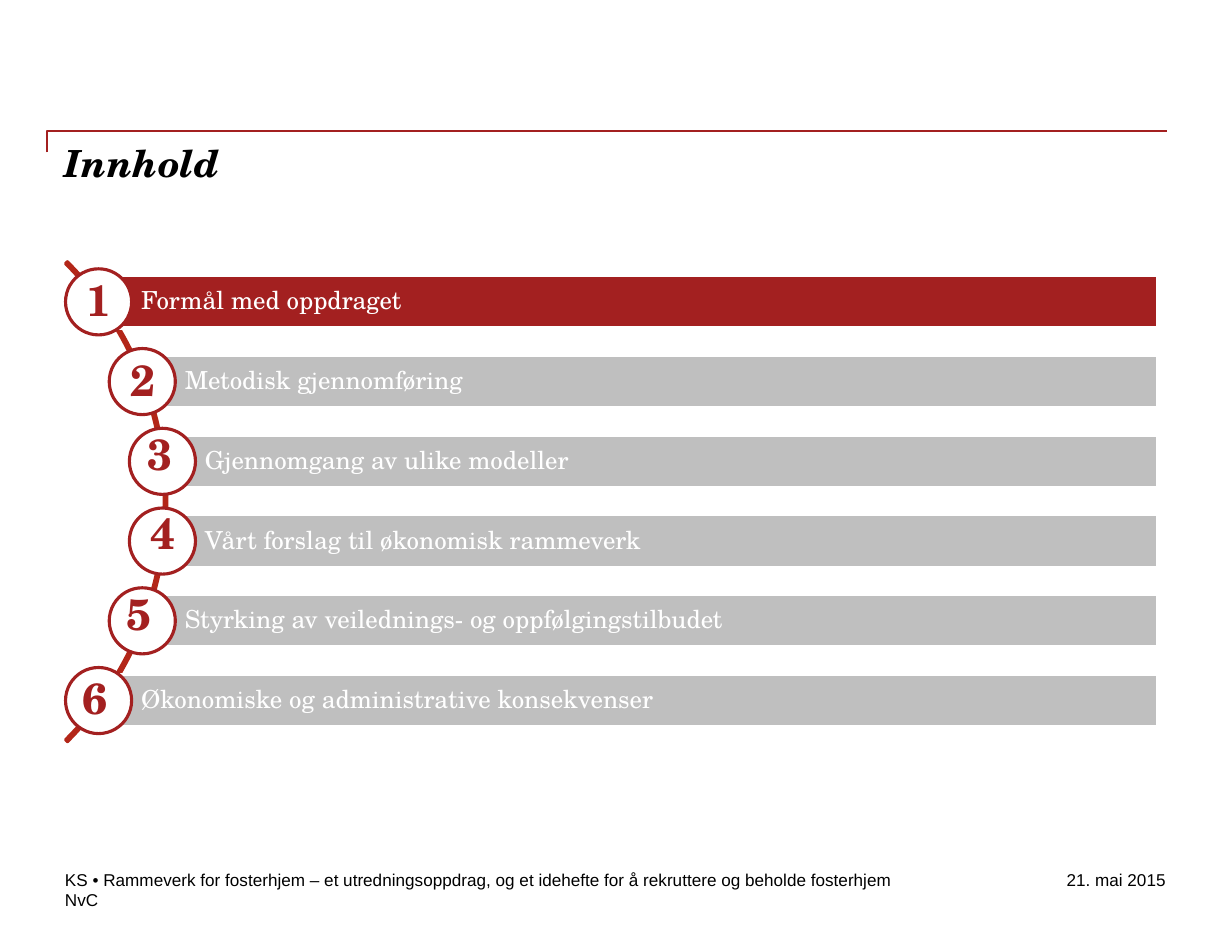
from dataclasses import dataclass

from lxml import etree
from pptx import Presentation
from pptx.dml.color import RGBColor
from pptx.enum.shapes import MSO_CONNECTOR, MSO_SHAPE
from pptx.enum.text import MSO_ANCHOR as ANCHOR, MSO_AUTO_SIZE, PP_ALIGN as ALIGN
from pptx.oxml.ns import qn
from pptx.util import Inches, Pt


@dataclass(frozen=True)
class Theme:
    red: RGBColor = RGBColor(0xA3, 0x20, 0x20)
    arc: RGBColor = RGBColor(0xB3, 0x26, 0x18)
    grey: RGBColor = RGBColor(0xBF, 0xBF, 0xBF)
    white: RGBColor = RGBColor(0xFF, 0xFF, 0xFF)
    black: RGBColor = RGBColor(0, 0, 0)
    serif: str = "TeX Gyre Schola"
    sans: str = "Arial"
    title: int = 24
    number: int = 28
    item: int = 16
    footer: int = 11


THEME = Theme()
BAR_RIGHT, BAR_TOP, BAR_STEP, BAR_HEIGHT = 10.34, 2.46, 0.712, 0.47
CIRCLE = 0.59

# item text, bar left, number left, number top
ITEMS = [
    ("Formål med oppdraget", 0.88, 0.70, 2.44),
    ("Metodisk gjennomføring", 1.27, 1.09, 3.15),
    ("Gjennomgang av ulike modeller", 1.45, 1.24, 3.81),
    ("Vårt forslag til økonomisk rammeverk", 1.45, 1.27, 4.52),
    ("Styrking av veilednings- og oppfølgingstilbudet", 1.27, 1.06, 5.24),
    ("Økonomiske og administrative konsekvenser", 0.88, 0.66, 5.99),
]


def box(*lengths):
    return [Inches(n) for n in lengths]


def write(sp, text, size, color, font=THEME.serif, bold=False, italic=False,
          align=ALIGN.LEFT, anchor=ANCHOR.TOP, margins=(0, 0, 0, 0), wrap=True):
    tf = sp.text_frame
    tf.text = text
    tf.word_wrap = wrap
    tf.auto_size = MSO_AUTO_SIZE.NONE
    tf.vertical_anchor = anchor
    tf.margin_left, tf.margin_top, tf.margin_right, tf.margin_bottom = box(*margins)
    p = tf.paragraphs[0]
    p.alignment = align
    f = p.runs[0].font
    f.name, f.size, f.bold, f.italic = font, Pt(size), bold, italic
    f.color.rgb = color
    return p


def add_shape(s, kind, place, fill, line):
    sp = s.shapes.add_shape(kind, *box(*place))
    sp.shadow.inherit = False
    if fill is None:
        sp.fill.background()
    else:
        sp.fill.solid()
        sp.fill.fore_color.rgb = fill
    sp.line.color.rgb = line
    sp.line.width = Pt(2)
    return sp


def add_text(s, place, text, size, color, **style):
    return write(s.shapes.add_textbox(*box(*place)), text, size, color, **style)


def add_title_rule(s):
    line = s.shapes.add_connector(MSO_CONNECTOR.ELBOW, *box(0.42, 1.36, 10.42, 1.17))
    line.line.color.rgb = THEME.red
    line.line.width = Pt(1)
    sp_pr = line._element.spPr
    etree.SubElement(sp_pr, qn("a:effectLst"))
    guides = sp_pr.find(qn("a:prstGeom")).find(qn("a:avLst"))
    etree.SubElement(guides, qn("a:gd"), name="adj1", fmla="val 0")


def add_title(s, text):
    title = s.shapes.title
    title.left, title.top, title.width, title.height = box(0.58, 1.25, 9.84, 1)
    write(title, text, THEME.title, THEME.black, bold=True, italic=True)


def add_arc(s):
    arc = add_shape(s, MSO_SHAPE.BLOCK_ARC, (-4.57, 1.45, 6.06, 6.06), None, THEME.arc)
    for i, value in enumerate((189, 27, 0.004)):
        arc.adjustments[i] = value


def add_item(s, index, text, left):
    top = BAR_TOP + index * BAR_STEP
    fill = THEME.red if index == 0 else THEME.grey
    bar = add_shape(s, MSO_SHAPE.RECTANGLE, (left, top, BAR_RIGHT - left, BAR_HEIGHT),
                    fill, THEME.white)
    p = write(bar, text, THEME.item, THEME.white, anchor=ANCHOR.MIDDLE,
              margins=(0.38, 0.04, 0.04, 0.04))
    p.line_spacing = 0.9
    add_shape(s, MSO_SHAPE.OVAL, (left - CIRCLE / 2, top - (CIRCLE - BAR_HEIGHT) / 2,
                                  CIRCLE, CIRCLE), THEME.white, THEME.red)


def add_footer(s):
    style = dict(size=THEME.footer, color=THEME.black, font=THEME.sans)
    add_text(s, (0.58, 7.76, 7.42, 0.19),
             "KS • Rammeverk for fosterhjem – et utredningsoppdrag, "
             "og et idehefte for å rekruttere og beholde fosterhjem",
             wrap=False, **style)
    add_text(s, (0.58, 7.94, 0.33, 0.19), "NvC", wrap=False, **style)
    add_text(s, (9.01, 7.76, 1.4, 0.19), "21. mai 2015", align=ALIGN.RIGHT, **style)


def main():
    prs = Presentation()
    prs.slide_width, prs.slide_height = box(11, 8.5)
    s = prs.slides.add_slide(prs.slide_layouts[5])
    add_title_rule(s)
    add_title(s, "Innhold")
    add_arc(s)
    for i, (text, left, number_left, number_top) in enumerate(ITEMS):
        add_item(s, i, text, left)
        add_text(s, (number_left, number_top, 0.37, 0.47), str(i + 1), THEME.number,
                 THEME.red, bold=True, align=ALIGN.CENTER, anchor=ANCHOR.MIDDLE)
    add_footer(s)
    prs.save("out.pptx")


if __name__ == "__main__":
    main()
